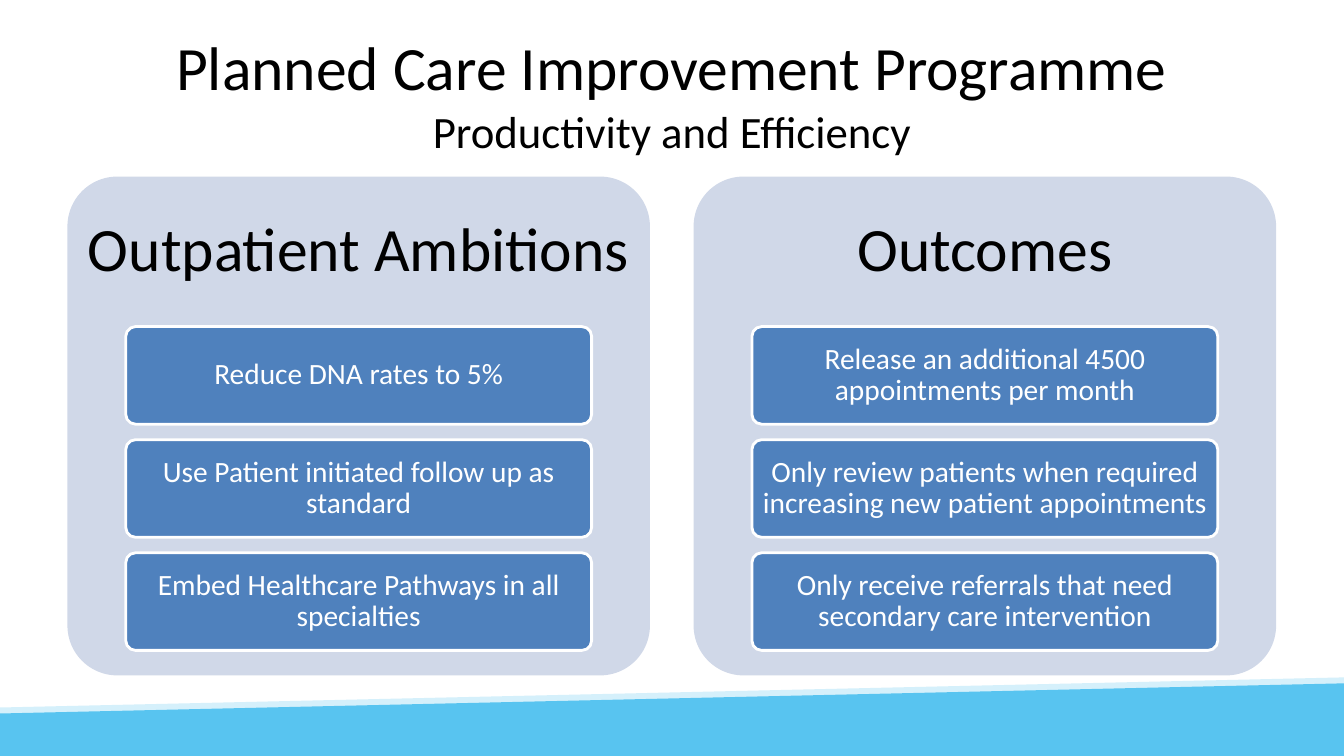
import pptx
import pptx.dml.color
import pptx.enum.shapes
import pptx.enum.text
import pptx.util

Cm = pptx.util.Cm
Pt = pptx.util.Pt
RGBColor = pptx.dml.color.RGBColor

BLACK = RGBColor(0x00, 0x00, 0x00)
WHITE = RGBColor(0xFF, 0xFF, 0xFF)
PANEL = RGBColor(0xD0, 0xD8, 0xE8)
CARD = RGBColor(0x4F, 0x81, 0xBD)
PALE = RGBColor(0xD5, 0xF0, 0xFB)
SKY = RGBColor(0x58, 0xC4, 0xF0)

WIDTH, HEIGHT = 33.87, 19.05

TITLE = [("Planned Care Improvement Programme", 44),
         ("Productivity and Efficiency", 32)]
PANELS = [
    ("Outpatient Ambitions", [
        "Reduce DNA rates to 5%",
        "Use Patient initiated follow up as standard",
        "Embed Healthcare Pathways in all specialties",
    ]),
    ("Outcomes", [
        "Release an additional 4500 appointments per month",
        "Only review patients when required increasing new patient appointments",
        "Only receive referrals that need secondary care intervention",
    ]),
]


class Board:
    """Draws on one slide in one style; all lengths are centimetres."""

    font = "Calibri"

    def __init__(self, slide):
        self.shapes = slide.shapes

    def label(self, shape, lines, color, pad, lead=0.9):
        """Fill a shape with one centred paragraph of (text, size) lines."""
        frame = shape.text_frame
        frame.word_wrap = True
        frame.vertical_anchor = pptx.enum.text.MSO_ANCHOR.MIDDLE
        frame.margin_left = frame.margin_right = Cm(pad[0])
        frame.margin_top = frame.margin_bottom = Cm(pad[1])
        para = frame.paragraphs[0]
        para.alignment = pptx.enum.text.PP_ALIGN.CENTER
        para.line_spacing = lead
        for i, (text, size) in enumerate(lines):
            if i:
                para.add_line_break()
            run = para.add_run()
            run.text = text
            run.font.name = self.font
            run.font.size = Pt(size)
            run.font.color.rgb = color

    def text(self, box, lines, pad, lead=0.9):
        shape = self.shapes.add_textbox(*map(Cm, box))
        self.label(shape, lines, BLACK, pad, lead)

    def paint(self, shape, fill):
        shape.shadow.inherit = False
        shape.fill.solid()
        shape.fill.fore_color.rgb = fill
        shape.line.fill.background()

    def round(self, box, fill):
        kind = pptx.enum.shapes.MSO_SHAPE.ROUNDED_RECTANGLE
        shape = self.shapes.add_shape(kind, *map(Cm, box))
        shape.adjustments[0] = 0.1
        self.paint(shape, fill)
        return shape

    def card(self, box, text):
        shape = self.round(box, CARD)
        shape.line.color.rgb = WHITE
        shape.line.width = Pt(2)
        self.label(shape, [(text, 21)], WHITE, (0.15, 0.1))

    def band(self, left, right, fill):
        """Fill the foot of the slide below a line from left to right height."""
        pen = self.shapes.build_freeform(Cm(0), Cm(left))
        ends = [(WIDTH, right), (WIDTH, HEIGHT), (0, HEIGHT)]
        pen.add_line_segments([(Cm(x), Cm(y)) for x, y in ends])
        self.paint(pen.convert_to_shape(), fill)

    def panel(self, x, y, head, cards):
        self.round((x, y, 14.68, 12.57), PANEL)
        self.text((x, y, 14.68, 3.76), [(head, 44)], (0.45, 0.45))
        for row, text in enumerate(cards):
            self.card((x + 1.47, y + 3.78 + 2.85 * row, 11.74, 2.46), text)


def main():
    deck = pptx.Presentation()
    deck.slide_width = Cm(WIDTH)
    deck.slide_height = Cm(HEIGHT)
    board = Board(deck.slides.add_slide(deck.slide_layouts[6]))
    board.band(17.83, 17.07, PALE)
    board.band(17.98, 17.22, SKY)
    board.text((1.7, 0.76, 30.48, 3.18), TITLE, (0.25, 0.13), 1.0)
    for col, (head, cards) in enumerate(PANELS):
        board.panel(1.7 + 15.78 * col, 4.45, head, cards)
    deck.save("out.pptx")


if __name__ == "__main__":
    main()
